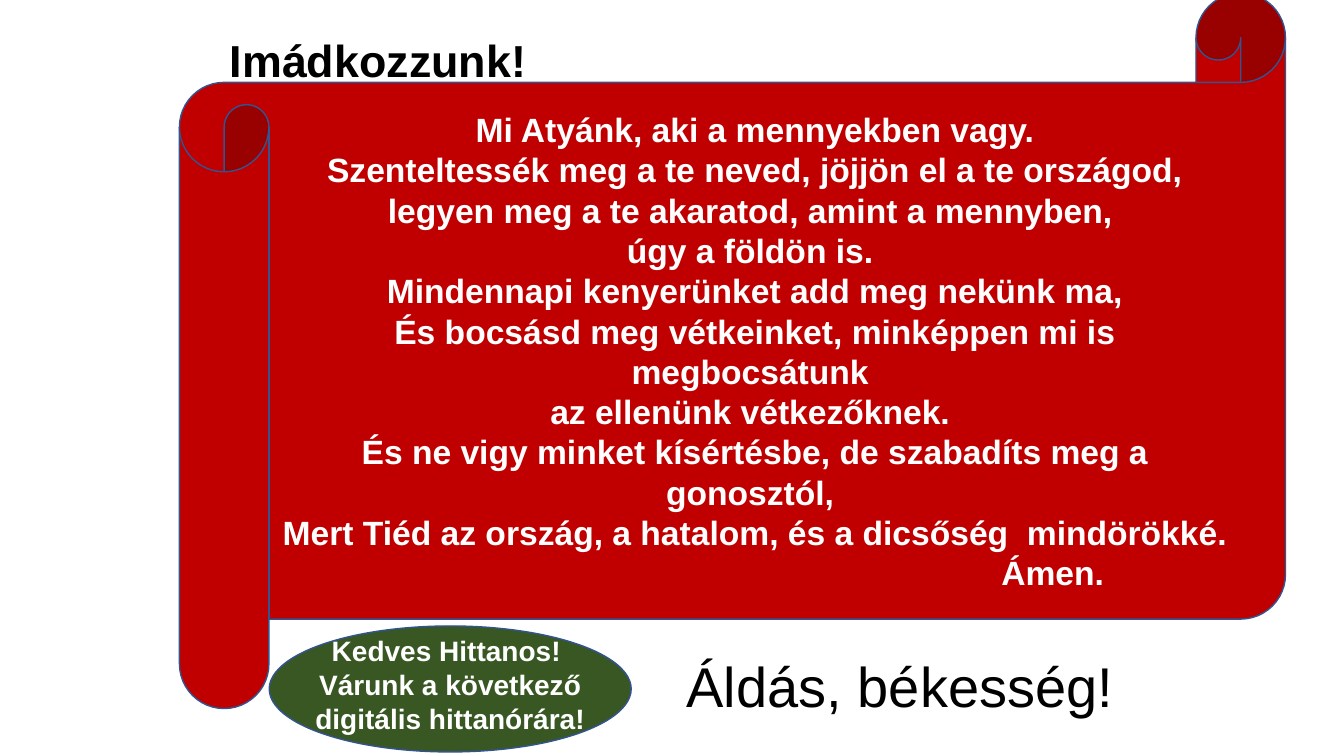
from dataclasses import dataclass

from pptx import Presentation
from pptx.dml.color import RGBColor
from pptx.enum.shapes import MSO_SHAPE
from pptx.enum.text import MSO_ANCHOR, PP_ALIGN
from pptx.util import Inches, Pt

SCROLL = MSO_SHAPE.HORIZONTAL_SCROLL
OVAL = MSO_SHAPE.OVAL
CENTER = PP_ALIGN.CENTER
TOP = MSO_ANCHOR.TOP
MIDDLE = MSO_ANCHOR.MIDDLE
BOTTOM = MSO_ANCHOR.BOTTOM


@dataclass(frozen=True)
class Theme:
    font: str = "Arial"
    accent_font: str = "Times New Roman"
    black: RGBColor = RGBColor(0x00, 0x00, 0x00)
    white: RGBColor = RGBColor(0xFF, 0xFF, 0xFF)
    red: RGBColor = RGBColor(0xC0, 0x00, 0x00)
    green: RGBColor = RGBColor(0x38, 0x57, 0x23)
    outline: RGBColor = RGBColor(0x32, 0x54, 0x91)
    crimson: RGBColor = RGBColor(0xAE, 0x2E, 0x51)
    title_size: int = 32
    prayer_size: int = 24
    invitation_size: int = 20
    blessing_size: int = 40


@dataclass(frozen=True)
class Box:
    left: float
    top: float
    width: float
    height: float

    def lengths(self) -> tuple:
        return tuple(Inches(value) for value in (self.left, self.top, self.width, self.height))


@dataclass(frozen=True)
class TextStyle:
    size: int
    color: RGBColor
    bold: bool = True
    anchor: MSO_ANCHOR = TOP


THEME = Theme()
TITLE_BOX = Box(1.78, -0.34, 3.94, 1.25)
SCROLL_BOX = Box(1.78, -0.07, 10.97, 7.1)
OVAL_BOX = Box(2.67, 6.21, 3.59, 1.25)
INVITATION_BOX = Box(2.67, 6.24, 3.59, 1.11)
BLESSING_BOX = Box(5.52, 6.41, 6.67, 0.77)
AMEN_INDENT = Inches(6)

PRAYER = [
    "Mi Atyánk, aki a mennyekben vagy.",
    "Szenteltessék meg a te neved, jöjjön el a te országod,",
    "legyen meg a te akaratod, amint a mennyben, ",
    "úgy a földön is. ",
    "Mindennapi kenyerünket add meg nekünk ma,",
    "És bocsásd meg vétkeinket, minképpen mi is megbocsátunk ",
    "az ellenünk vétkezőknek. ",
    "És ne vigy minket kísértésbe, de szabadíts meg a gonosztól, ",
    "Mert Tiéd az ország, a hatalom, és a dicsőség  mindörökké. ",
    "Ámen. ",
]
INVITATION = ["Kedves Hittanos! ", "Várunk a következő digitális hittanórára!"]


def write_text(shape, lines: list[str], style: TextStyle) -> None:
    text_frame = shape.text_frame
    text_frame.text = "\n".join(lines)
    text_frame.word_wrap = True
    text_frame.vertical_anchor = style.anchor
    for paragraph in text_frame.paragraphs:
        paragraph.alignment = CENTER
        paragraph.line_spacing = 1.0
        for run in paragraph.runs:
            run.font.name = THEME.font
            run.font.size = Pt(style.size)
            run.font.bold = style.bold
            run.font.color.rgb = style.color


def add_panel(slide, kind: MSO_SHAPE, box: Box, fill: RGBColor):
    shape = slide.shapes.add_shape(kind, *box.lengths())
    shape.shadow.inherit = False
    shape.fill.solid()
    shape.fill.fore_color.rgb = fill
    shape.line.color.rgb = THEME.outline
    shape.line.width = Pt(1)
    return shape


def add_text(slide, box: Box, lines: list[str], style: TextStyle):
    shape = slide.shapes.add_textbox(*box.lengths())
    write_text(shape, lines, style)
    return shape


def main() -> None:
    presentation = Presentation()
    presentation.slide_width = Inches(13.33)
    presentation.slide_height = Inches(7.5)
    slide = presentation.slides.add_slide(presentation.slide_layouts[5])

    title = slide.shapes.title
    title.left, title.top, title.width, title.height = TITLE_BOX.lengths()
    write_text(title, ["Imádkozzunk!"], TextStyle(THEME.title_size, THEME.black, anchor=BOTTOM))

    scroll = add_panel(slide, SCROLL, SCROLL_BOX, THEME.red)
    write_text(scroll, PRAYER, TextStyle(THEME.prayer_size, THEME.white, anchor=MIDDLE))
    amen = scroll.text_frame.paragraphs[-1]
    amen._p.get_or_add_pPr().set("marL", str(AMEN_INDENT))

    add_panel(slide, OVAL, OVAL_BOX, THEME.green)
    add_text(slide, INVITATION_BOX, INVITATION, TextStyle(THEME.invitation_size, THEME.white))

    blessing = add_text(slide, BLESSING_BOX, [" "], TextStyle(THEME.blessing_size, THEME.crimson, bold=False))
    paragraph = blessing.text_frame.paragraphs[0]
    paragraph.runs[0].font.name = THEME.accent_font
    greeting = paragraph.add_run()
    greeting.text = "Áldás, békesség!"
    greeting.font.name = THEME.font
    greeting.font.size = Pt(THEME.blessing_size)
    greeting.font.color.rgb = THEME.black

    presentation.save("out.pptx")


if __name__ == "__main__":
    main()
